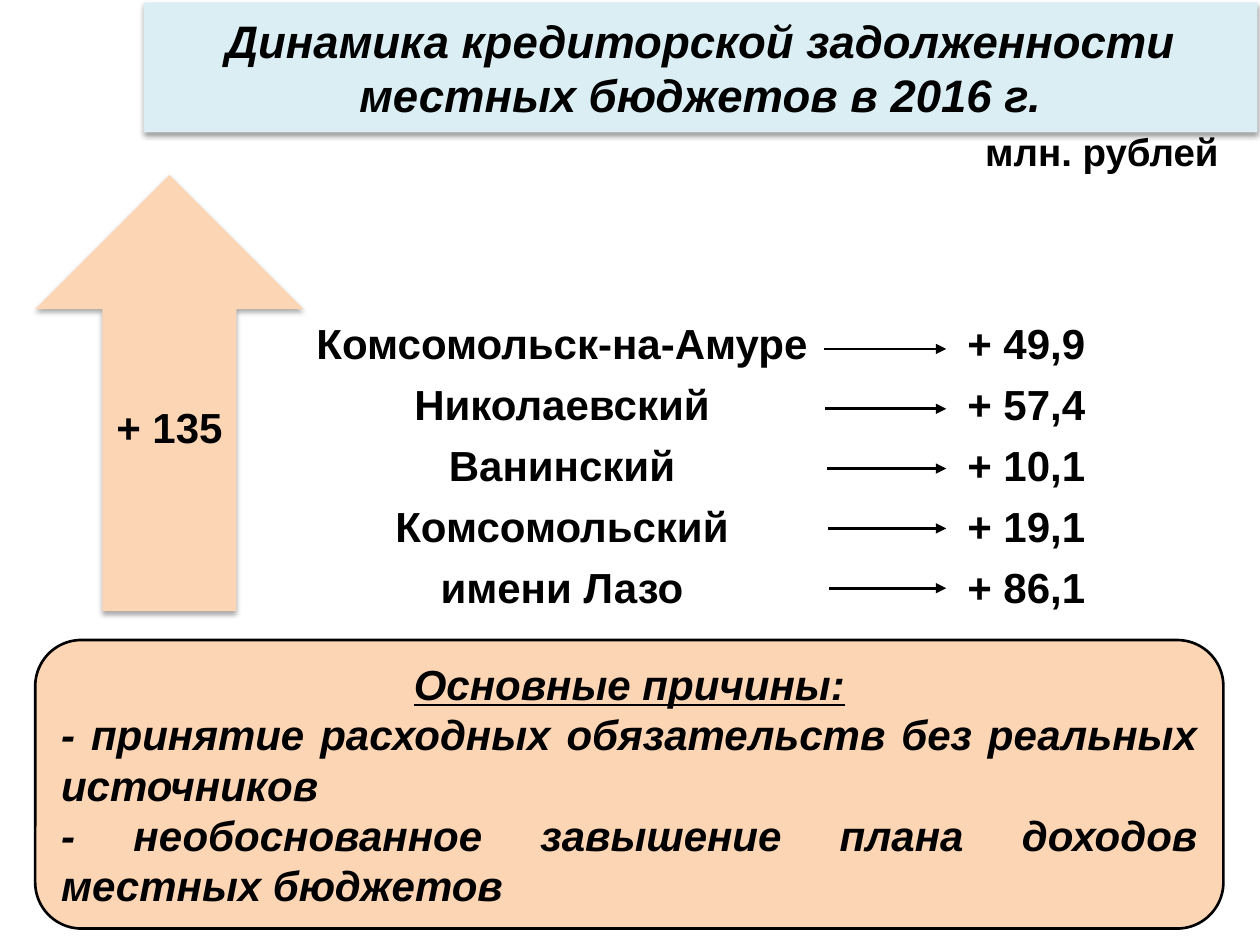
"""Build the slide on local budgets' accounts payable in 2016."""
from lxml import etree
from pptx import Presentation
from pptx import util as u
from pptx.dml.color import RGBColor as Rgb
from pptx.enum import shapes, text
from pptx.oxml import parse_xml
from pptx.oxml.ns import nsdecls, qn

THEME = {
    "font": "Arial", "ink": Rgb(0, 0, 0), "head": Rgb.from_string("DBEEF4"),
    "peach": Rgb.from_string("FCD5B5"), "title": 26, "body": 24, "unit": 22, "line": 1.5,
}
MID, LEFT, RIGHT, FULL = (text.PP_ALIGN.CENTER, text.PP_ALIGN.LEFT,
                          text.PP_ALIGN.RIGHT, text.PP_ALIGN.JUSTIFY)
deck = Presentation()
deck.slide_width, deck.slide_height = u.Inches(10), u.Inches(7.5)
COL, ROW = deck.slide_width / 100, deck.slide_height / 100
slide = deck.slides.add_slide(deck.slide_layouts[5])


def grid(x, y, w, h):
    """Turn columns and rows into lengths."""
    return [round(n * unit) for n, unit in zip((x, y, w, h), (COL, ROW, COL, ROW))]


def write(frame, lines, size="body", **extra):
    """Fill a text frame with (text, alignment, font values) lines."""
    for i, (words, align, more) in enumerate(lines):
        para = frame.paragraphs[0] if i == 0 else frame.add_paragraph()
        para.alignment = align
        run = para.add_run()
        run.text = words
        look = {"name": THEME["font"], "size": u.Pt(THEME[size]), "bold": True}
        for key, val in {**look, **extra, **more}.items():
            setattr(run.font, key, val)
        run.font.color.rgb = THEME["ink"]


title = slide.shapes.title
for key, val in zip(("left", "top", "width", "height"), grid(11.4, 0.27, 88.4, 13.73)):
    setattr(title, key, val)
title._element.spPr.append(parse_xml(
    f'<a:prstGeom {nsdecls("a")} prst="roundRect"><a:avLst/></a:prstGeom>'))
frame = title.text_frame
for key in ("margin_left", "margin_top", "margin_right", "margin_bottom"):
    setattr(frame, key, 0)
frame.auto_size = text.MSO_AUTO_SIZE.NONE
write(frame, [("Динамика кредиторской задолженности местных бюджетов в 2016 г.", MID, {})],
      "title", italic=True)

cause = slide.shapes.add_shape(shapes.MSO_SHAPE.ROUNDED_RECTANGLE, *grid(2.8, 67.73, 94.3, 30.53))
cause.adjustments[0] = 0.16
cause.shadow.inherit = False
cause.line.color.rgb = THEME["ink"]
cause.line.width = u.Pt(THEME["line"])
write(cause.text_frame, [
    ("Основные причины:", MID, {"underline": True}),
    ("- принятие расходных обязательств без реальных источников", FULL, {}),
    ("- необоснованное завышение плана доходов местных бюджетов", FULL, {}),
], italic=True)

towns = ["Комсомольск-на-Амуре", "Николаевский", "Ванинский", "Комсомольский", "имени Лазо"]
sums = ["+ 49,9", "+ 57,4", "+ 10,1", "+ 19,1", "+ 86,1"]
pad = u.Inches(0.01)
for left, wide, items in ((24.2, 40.8, towns), (75.9, 11.1, sums)):
    table = slide.shapes.add_table(len(items), 1, *grid(left, 32.53, wide, 32.27)).table
    table.first_row = table.horz_banding = False
    for i, item in enumerate(items):
        cell = table.cell(i, 0)
        cell.fill.background()
        for key, val in {"margin_left": pad, "margin_right": pad, "margin_top": pad,
                         "margin_bottom": 0,
                         "vertical_anchor": text.MSO_ANCHOR.BOTTOM}.items():
            setattr(cell, key, val)
        write(cell.text_frame, [(item, MID, {})])

for i in range(len(towns)):
    x, y, end, _ = grid(65.4 + i / 10, 36.93 + 6.33 * i, 75.1, 0)
    line = slide.shapes.add_connector(shapes.MSO_CONNECTOR.STRAIGHT, x, y, end, y)
    line.line.color.rgb = THEME["ink"]
    line.line.width = u.Pt(THEME["line"])
    etree.SubElement(line.line._get_or_add_ln(), qn("a:tailEnd"), type="triangle")
    etree.SubElement(line._element.spPr, qn("a:effectLst"))

rise = slide.shapes.add_shape(shapes.MSO_SHAPE.UP_ARROW, *grid(2.8, 18.53, 21.3, 46.13))
rise.line.fill.background()
write(rise.text_frame, [("+ 135", MID, {})])

for shape, tone in ((title, "head"), (cause, "peach"), (rise, "peach")):
    shape.fill.solid()
    shape.fill.fore_color.rgb = THEME[tone]
    shape.text_frame.word_wrap = True
    shape.text_frame.vertical_anchor = text.MSO_ANCHOR.MIDDLE

for shape, alpha, dist in ((title, 38, 1.6), (rise, 35, 1.8)):
    shape.shadow.inherit = False
    glow = etree.SubElement(
        shape._element.spPr.find(qn("a:effectLst")), qn("a:outerShdw"),
        blurRad=str(u.Pt(3.1)), dist=str(u.Pt(dist)), dir="5400000", rotWithShape="0")
    tint = etree.SubElement(glow, qn("a:srgbClr"), val=str(THEME["ink"]))
    etree.SubElement(tint, qn("a:alpha"), val=str(alpha * 1000))

unit = slide.shapes.add_textbox(*grid(76.5, 12.93, 21.2, 6.27))
unit.text_frame.word_wrap = True
write(unit.text_frame, [("млн. рублей", RIGHT, {})], "unit")

deck.save("out.pptx")
